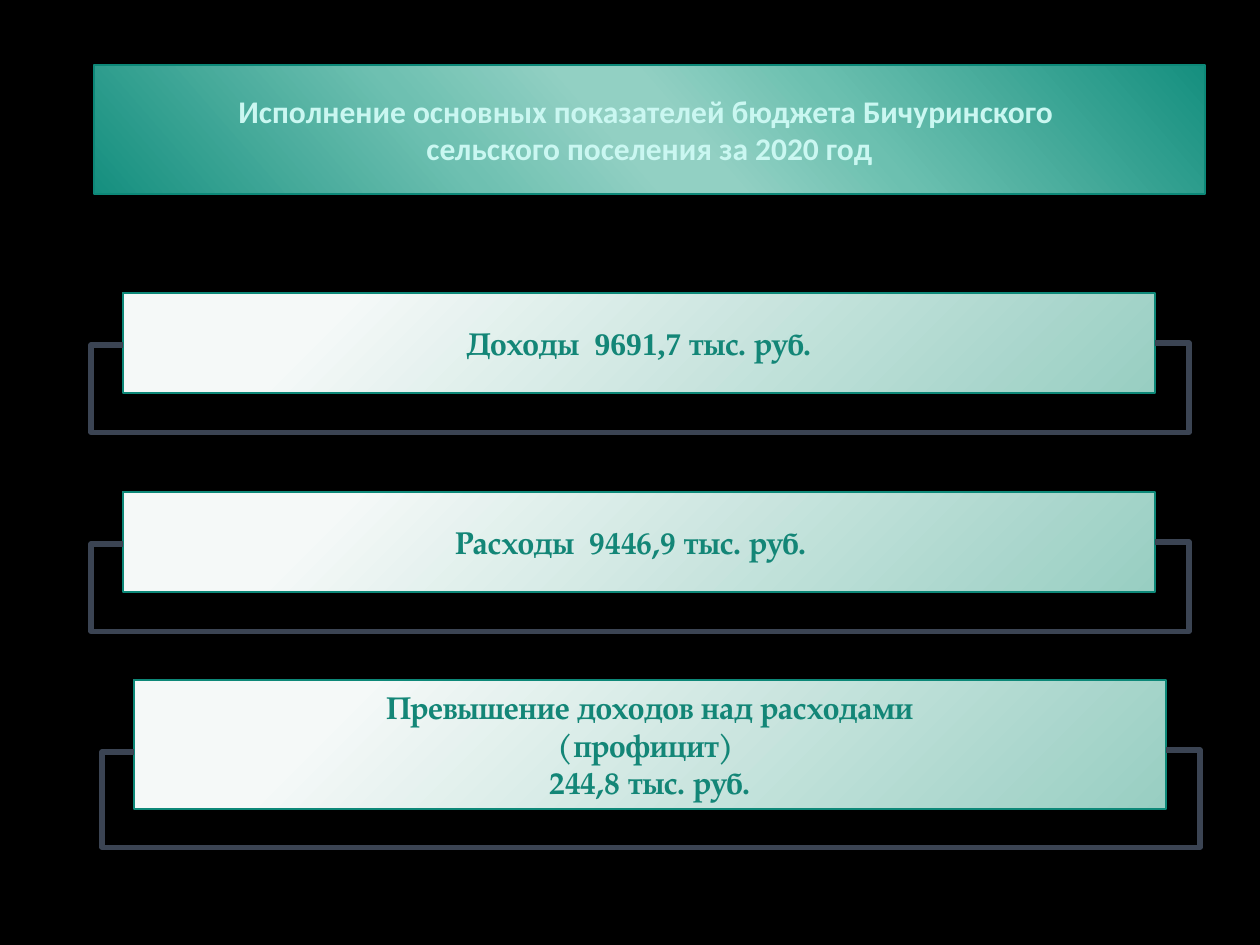
from lxml.etree import SubElement
from pptx import Presentation
from pptx.dml.color import RGBColor
from pptx.enum.shapes import MSO_CONNECTOR, MSO_SHAPE
from pptx.enum.text import MSO_ANCHOR, PP_ALIGN
from pptx.oxml import parse_xml
from pptx.oxml.ns import nsdecls, qn
from pptx.util import Emu, Pt

# Content
TITLE = ["Исполнение основных показателей бюджета Бичуринского ",
         "сельского поселения за 2020 год"]
# box (left, top, width, height), joint and base of the loop below the top, lines of runs
ROWS = [
    ((123, 293, 1032, 100), 50, 140, [["Доходы  ", ("9691,7",), " тыс. руб."]]),
    ((123, 492, 1032, 100), 50, 140, [["Расходы  9446,9 тыс. руб.  "]]),
    ((134, 680, 1032, 129), 70, 168, [["Превышение доходов над расходами"],
                                      ["(профицит) "], ["244,8 тыс. руб."]]),
]
BANNER = (94, 65, 1111, 129)
OUT_L, OUT_R, RISE = 32, 34, 2  # loop overhang and height step between its ends


class Theme:
    back, edge, loop = "000000", "0D8878", "3B4453"
    head, body = "CAF7F1", "138677"
    banner = [(0, "158F7F"), (33, "6CC0B0"), (47, "92D0C3"),
              (53, "92D0C3"), (68, "6EC0B1"), (100, "158F7F")]
    panel = [(20, "F5F9F8"), (100, "98CEC2")]
    sans, serif, digit = "Calibri", "TeX Gyre Pagella", "Times New Roman"
    size, thin, thick = Pt(18), Pt(0.75), Pt(3)


LINEAR = '<a:lin ang="8340000" scaled="0"/>'
RADIAL = ('<a:path path="circle"><a:fillToRect l="-15000" t="-15000" '
          'r="115000" b="115000"/></a:path>')


def px(n):
    return Emu(round(n * 9144000 / 1260))


def rgb(code):
    return RGBColor.from_string(code)


def paint(shape, stops, kind):
    """Give the shape a gradient fill and a thin edge."""
    shape.line.color.rgb = rgb(Theme.edge)
    shape.line.width = Theme.thin
    marks = "".join(f'<a:gs pos="{p * 1000}"><a:srgbClr val="{c}"/></a:gs>'
                    for p, c in stops)
    grad = parse_xml(f'<a:gradFill {nsdecls("a")} rotWithShape="1">'
                     f'<a:gsLst>{marks}</a:gsLst>{kind}</a:gradFill>')
    shape.line._ln.addprevious(grad)


def write(shape, lines, font, color):
    """Fill in centred bold lines; a run in a tuple takes the digit font."""
    frame = shape.text_frame
    frame.word_wrap = True
    frame.vertical_anchor = MSO_ANCHOR.MIDDLE
    for i, runs in enumerate(lines):
        para = frame.add_paragraph() if i else frame.paragraphs[0]
        para.alignment = PP_ALIGN.CENTER
        para.line_spacing = 1.0
        para.space_before = Pt(0)
        para.font.size, para.font.bold = Theme.size, True
        para.font.name, para.font.color.rgb = font, rgb(color)
        for part in runs:
            run = para.add_run()
            run.text = part if isinstance(part, str) else part[0]
            if isinstance(part, tuple):
                run.font.name = Theme.digit


def loop(slide, box, joint, base):
    """Draw a five-part elbow from the left side, under the box, to the right."""
    x, y, w, _ = box
    line = slide.shapes.add_connector(MSO_CONNECTOR.ELBOW, px(x), px(y + joint + RISE),
                                      px(x + w), px(y + joint))
    line.line.color.rgb = rgb(Theme.loop)
    line.line.width = Theme.thick
    props = line._element.spPr
    frame = props.find(qn("a:xfrm"))
    frame.attrib.pop("flipV", None)
    frame.set("rot", "10800000")
    frame.set("flipH", "1")
    geom = props.find(qn("a:prstGeom"))
    geom.set("prst", "bentConnector5")
    bends = geom.find(qn("a:avLst"))
    ratios = (-OUT_L / w, -(base - joint - RISE) / RISE, 1 + OUT_R / w)
    for i, ratio in enumerate(ratios, 1):
        SubElement(bends, qn("a:gd"), name=f"adj{i}", fmla=f"val {round(ratio * 100000)}")
    SubElement(props, qn("a:effectLst"))


deck = Presentation()
deck.slide_width, deck.slide_height = px(1260), px(945)
slide = deck.slides.add_slide(deck.slide_layouts[5])
slide.background.fill.solid()
slide.background.fill.fore_color.rgb = rgb(Theme.back)

# Banner
title = slide.shapes.title
title.left, title.top, title.width, title.height = map(px, BANNER)
paint(title, Theme.banner, LINEAR)
write(title, [[text] for text in TITLE], Theme.sans, Theme.head)

# Panels with their loops
for box, joint, base, lines in ROWS:
    panel = slide.shapes.add_shape(MSO_SHAPE.RECTANGLE, *map(px, box))
    panel.shadow.inherit = False
    paint(panel, Theme.panel, RADIAL)
    write(panel, lines, Theme.serif, Theme.body)
    loop(slide, box, joint, base)

deck.save("out.pptx")
